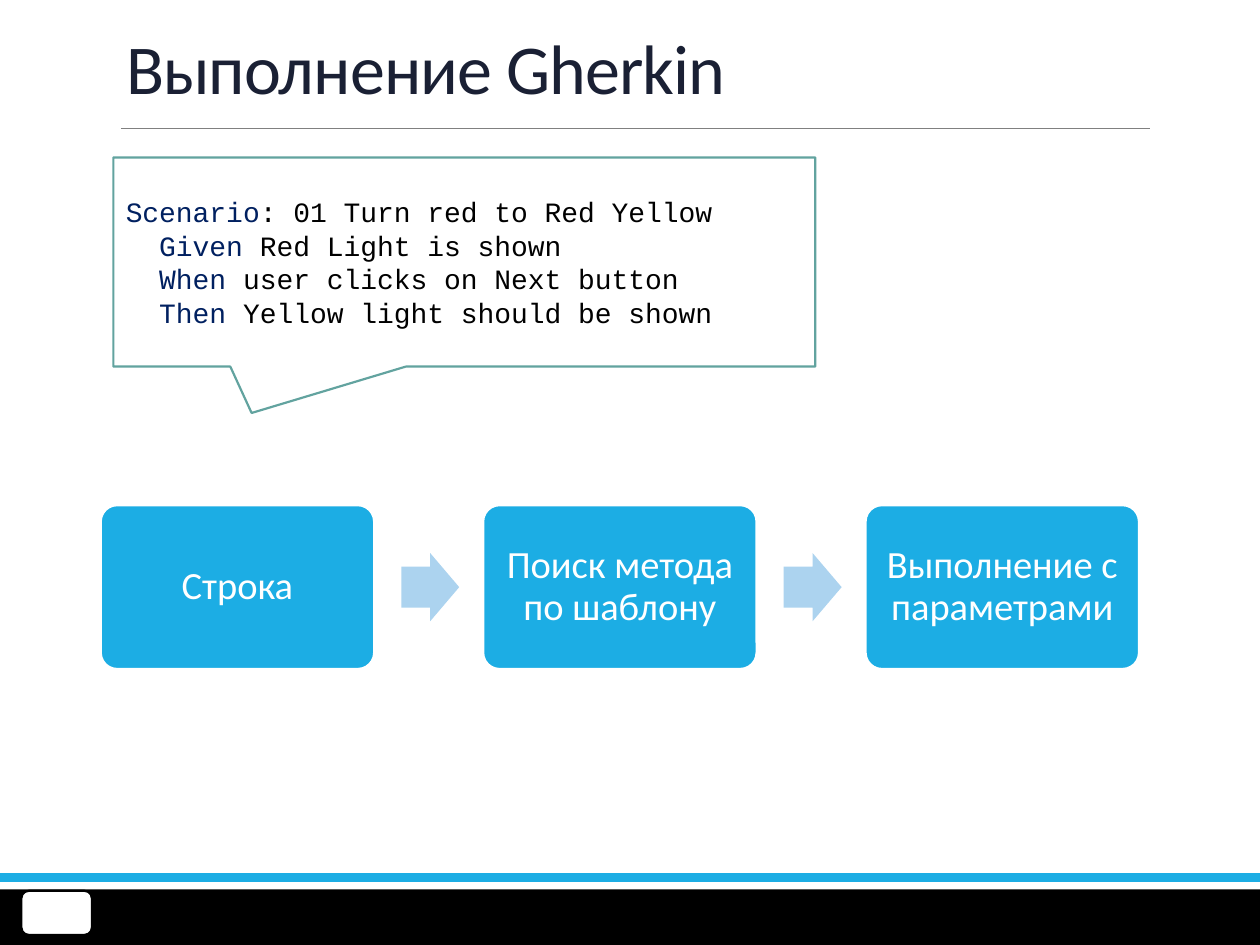
from lxml import etree
from pptx import Presentation
from pptx.dml.color import RGBColor
from pptx.enum.shapes import MSO_CONNECTOR, MSO_SHAPE
from pptx.enum.text import MSO_ANCHOR, MSO_AUTO_SIZE, PP_ALIGN
from pptx.oxml.ns import qn
from pptx.util import Inches, Pt

RECT, ROUND = MSO_SHAPE.RECTANGLE, MSO_SHAPE.ROUNDED_RECTANGLE
ARROW, CALLOUT = MSO_SHAPE.RIGHT_ARROW, MSO_SHAPE.RECTANGULAR_CALLOUT
LINE = MSO_CONNECTOR.STRAIGHT
LEFT, CENTER = PP_ALIGN.LEFT, PP_ALIGN.CENTER
MIDDLE, BOTTOM = MSO_ANCHOR.MIDDLE, MSO_ANCHOR.BOTTOM
WIDE, HIGH = 10, 7.5
BLUE, WHITE, BLACK, NAVY = "1CADE4", "FFFFFF", "000000", "002060"
STEPS = ["Строка", "Поиск метода по шаблону", "Выполнение с параметрами"]
CODE = [
    ("", "Scenario", ": 01 Turn red to Red Yellow"),
    ("  ", "Given", " Red Light is shown"),
    ("  ", "When", " user clicks on Next button"),
    ("  ", "Then", " Yellow light should be shown"),
]


def color(text):
    """Turn a hex string into a colour."""
    return RGBColor.from_string(text)


def put(item, **vals):
    """Set every given format value on an object."""
    for name, val in vals.items():
        setattr(item, name, val)


def write(para, text, size, face, tint):
    """Add one formatted run to a paragraph."""
    run = para.add_run()
    run.text = text
    put(run.font, size=Pt(size), name=face)
    run.font.color.rgb = color(tint)
    return run


def draw(slide, kind, box, fill, edge=None, adjust=()):
    """Place a flat preset shape in a box of inches."""
    shape = slide.shapes.add_shape(kind, *map(Inches, box))
    shape.shadow.inherit = False
    shape.fill.solid()
    shape.fill.fore_color.rgb = color(fill)
    if edge:
        shape.line.color.rgb = color(edge)
        shape.line.width = Pt(1.25)
    else:
        shape.line.fill.background()
    for spot, val in enumerate(adjust):
        shape.adjustments[spot] = val
    return shape


def footer(slide, box):
    """Draw the blue stripe, the black band and its badge."""
    left, top, width, height = box
    draw(slide, RECT, (left, top + 0.13, width, height - 0.13), BLACK)
    draw(slide, RECT, (left, top, width, 0.07), BLUE)
    draw(slide, ROUND, (left + 0.17, top + 0.14, 0.56, 0.35), WHITE, BLACK)


def header(slide, box, text):
    """Fill the title and rule a line below it."""
    left, top, width, height = box
    title = slide.shapes.title
    put(title, left=Inches(left), top=Inches(top),
        width=Inches(width), height=Inches(height))
    put(title.text_frame, vertical_anchor=BOTTOM, word_wrap=True,
        auto_size=MSO_AUTO_SIZE.NONE)
    para = title.text_frame.paragraphs[0]
    put(para, alignment=LEFT, line_spacing=0.85)
    run = write(para, text, 40, "Calibri", "1A2034")
    run.font._element.set("spc", "-50")
    ends = left + 0.06, top + 0.71, left + width - 0.02, top + 0.71
    rule = slide.shapes.add_connector(LINE, *map(Inches, ends))
    rule.line.color.rgb = color("808080")
    rule.line.width = Pt(0.5)
    etree.SubElement(rule._element.spPr, qn("a:effectLst"))


def chain(slide, box, steps):
    """Spread step boxes evenly with an arrow in each gap."""
    left, top, width, height = box
    wide = 2.17
    pitch = (width - wide) / (len(steps) - 1)
    for spot, text in enumerate(steps):
        x = left + spot * pitch
        card = draw(slide, ROUND, (x, top, wide, height), BLUE, WHITE, [0.1])
        frame = card.text_frame
        put(frame, word_wrap=True, vertical_anchor=MIDDLE,
            **{"margin_" + side: Inches(0.13)
               for side in ("left", "top", "right", "bottom")})
        para = frame.paragraphs[0]
        put(para, alignment=CENTER, line_spacing=0.9)
        write(para, text, 22, "Calibri", WHITE)
        if spot:
            place = x - 0.65, top + (height - 0.54) / 2, 0.46, 0.54
            draw(slide, ARROW, place, "ACD3EF", adjust=[0.6, 0.5])


def bubble(slide, box, code):
    """Draw the callout that holds the scenario code."""
    shape = draw(slide, CALLOUT, box, WHITE, "62A39F", [-0.303, 0.722])
    frame = shape.text_frame
    put(frame, word_wrap=True, vertical_anchor=MIDDLE)
    for spot, (indent, key, rest) in enumerate(code):
        para = frame.add_paragraph() if spot else frame.paragraphs[0]
        para.alignment = LEFT
        write(para, indent + key, 16, "Courier New", NAVY)
        write(para, rest, 16, "Courier New", BLACK)


def main():
    """Build the slide and save it."""
    deck = Presentation()
    put(deck, slide_width=Inches(WIDE), slide_height=Inches(HIGH))
    slide = deck.slides.add_slide(deck.slide_layouts[5])
    footer(slide, (0, 6.93, WIDE, HIGH - 6.93))
    header(slide, (0.9, 0.31, 8.25, 0.6), "Выполнение Gherkin")
    chain(slide, (0.8, 4.01, 8.24, 1.3), STEPS)
    bubble(slide, (0.9, 1.25, 5.57, 1.66), CODE)
    deck.save("out.pptx")


if __name__ == "__main__":
    main()
